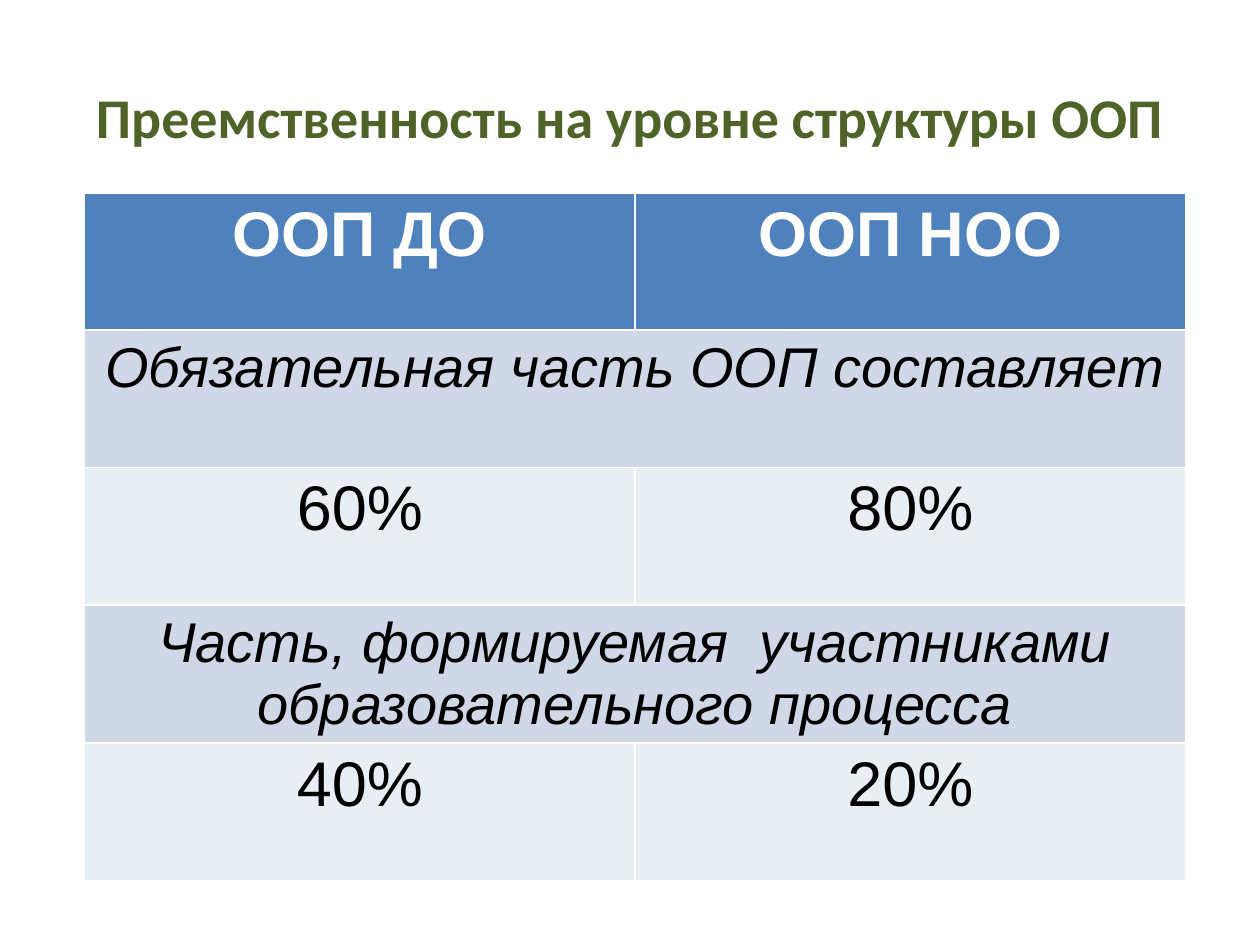
from pptx import Presentation
from pptx.dml.color import RGBColor
from pptx.enum import text
from pptx.util import Pt

GREEN = RGBColor(0x4F, 0x62, 0x28)
BLUE = RGBColor(0x4F, 0x81, 0xBD)
BAND = RGBColor(0xD0, 0xD8, 0xE8)
PALE = RGBColor(0xE9, 0xED, 0xF4)
WHITE = RGBColor(0xFF, 0xFF, 0xFF)
BLACK = RGBColor(0x00, 0x00, 0x00)

HEADER = dict(fill=BLUE, size=36, color=WHITE, bold=True)
SECTION = dict(fill=BAND, size=32, color=BLACK, italic=True)
SHARE = dict(fill=PALE, size=36, color=BLACK)

ROWS = [
    (HEADER, ["ООП ДО", "ООП НОО"]),
    (SECTION, ["Обязательная часть ООП составляет"]),
    (SHARE, ["60%", "80%"]),
    (SECTION, ["Часть, формируемая  участниками образовательного процесса"]),
    (SHARE, ["40%", "20%"]),
]


def add_text(tf, content, font, size, color, bold=False, italic=False):
    p = tf.paragraphs[0]
    p.alignment = text.PP_ALIGN.CENTER
    r = p.add_run()
    r.text = content
    r.font.name = font
    r.font.size = Pt(size)
    r.font.color.rgb = color
    r.font.bold = bold
    r.font.italic = italic


def place_title(s, x, y, w, h):
    sp = s.shapes.title
    sp.left, sp.top, sp.width, sp.height = Pt(x), Pt(y), Pt(w), Pt(h)
    tf = sp.text_frame
    tf.word_wrap = True
    tf.vertical_anchor = text.MSO_ANCHOR.MIDDLE
    add_text(tf, "Преемственность на уровне структуры ООП", "Calibri", 32, GREEN, bold=True)


def place_table(s, x, y, w, h):
    table = s.shapes.add_table(len(ROWS), 2, Pt(x), Pt(y), Pt(w), Pt(h)).table
    for i, (style, texts) in enumerate(ROWS):
        look = dict(style)
        fill = look.pop("fill")
        if len(texts) == 1:
            table.cell(i, 0).merge(table.cell(i, 1))
        for cell in table.rows[i].cells:
            cell.fill.solid()
            cell.fill.fore_color.rgb = fill
        for j, content in enumerate(texts):
            add_text(table.cell(i, j).text_frame, content, "Arial", **look)


def main():
    prs = Presentation()
    prs.slide_width, prs.slide_height = Pt(720), Pt(540)
    s = prs.slides.add_slide(prs.slide_layouts[5])
    place_title(s, 36, 21.6, 648, 90)
    place_table(s, 48.3, 110.2, 629.3, 392.5)
    prs.save("out.pptx")


if __name__ == "__main__":
    main()
